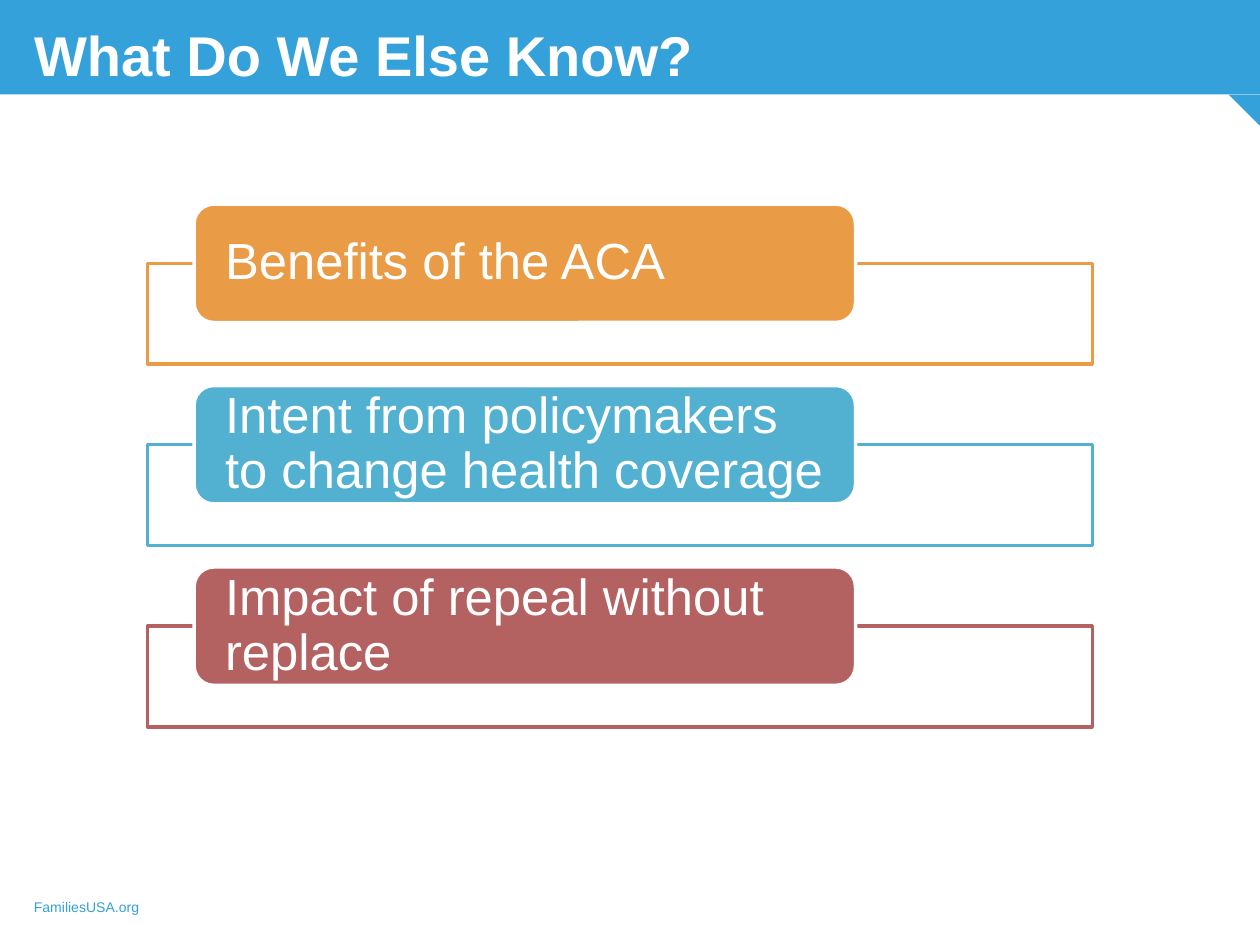
from pptx import Presentation
from pptx.dml.color import RGBColor
from pptx.enum.shapes import MSO_SHAPE
from pptx.enum.text import MSO_ANCHOR, PP_ALIGN
from pptx.util import Inches, Pt

RECT = MSO_SHAPE.RECTANGLE
ROUNDED = MSO_SHAPE.ROUNDED_RECTANGLE
TRIANGLE = MSO_SHAPE.RIGHT_TRIANGLE
MIDDLE, BOTTOM = MSO_ANCHOR.MIDDLE, MSO_ANCHOR.BOTTOM
LEFT = PP_ALIGN.LEFT

COLORS = {
    "brand": "35A1DA",
    "white": "FFFFFF",
    "orange": "EA9B45",
    "blue": "52B0D0",
    "red": "B46162",
}

prs = Presentation()
prs.slide_width, prs.slide_height = Inches(10), Inches(7.5)
slide = prs.slides.add_slide(prs.slide_layouts[5])


def add_box(kind, left, top, width, height, fill, line=None):
    box = slide.shapes.add_shape(
        kind, Inches(left), Inches(top), Inches(width), Inches(height))
    box.shadow.inherit = False
    box.fill.solid()
    box.fill.fore_color.rgb = RGBColor.from_string(COLORS[fill])
    if line:
        box.line.color.rgb = RGBColor.from_string(COLORS[line])
        box.line.width = Pt(2)
    else:
        box.line.fill.background()
    return box


def write(frame, text, size, color, bold=False):
    frame.word_wrap = True
    frame.text = text
    paragraph = frame.paragraphs[0]
    paragraph.alignment = LEFT
    paragraph.font.name = "Arial"
    paragraph.font.size = Pt(size)
    paragraph.font.bold = bold
    paragraph.font.color.rgb = RGBColor.from_string(COLORS[color])
    return paragraph


# Header band with folded corner
band = add_box(RECT, 0, 0, 10, 0.75, "brand")
corner = add_box(TRIANGLE, 9.75, 0.75, 0.25, 0.25, "brand")
corner.rotation = 180

# Title, brought in front of the band
title = slide.shapes.title
title.left, title.top = Inches(0.17), Inches(0.11)
title.width, title.height = Inches(9.67), Inches(0.64)
title.text_frame.vertical_anchor = BOTTOM
write(title.text_frame, "What Do We Else Know?", 32, "white", bold=True)
corner.element.addnext(title.element)

# Footer
footer = slide.shapes.add_textbox(
    Inches(0.17), Inches(7.08), Inches(3.42), Inches(0.24))
write(footer.text_frame, "FamiliesUSA.org", 8, "brand")

# Topics: an outlined panel with a label overlapping its top edge
topics = [
    ("Benefits of the ACA", "orange"),
    ("Intent from policymakers to change health coverage", "blue"),
    ("Impact of repeal without replace", "red"),
]
for row, (topic, color) in enumerate(topics):
    top = 1.62 + row * 1.44
    add_box(RECT, 1.17, top + 0.47, 7.5, 0.8, "white", color)
    label = add_box(ROUNDED, 1.54, top, 5.25, 0.94, color, "white")
    frame = label.text_frame
    frame.margin_left, frame.margin_right = Inches(0.2), Inches(0.15)
    frame.margin_top = frame.margin_bottom = 0
    frame.vertical_anchor = MIDDLE
    write(frame, topic, 29, "white").line_spacing = 0.9

prs.save("out.pptx")
